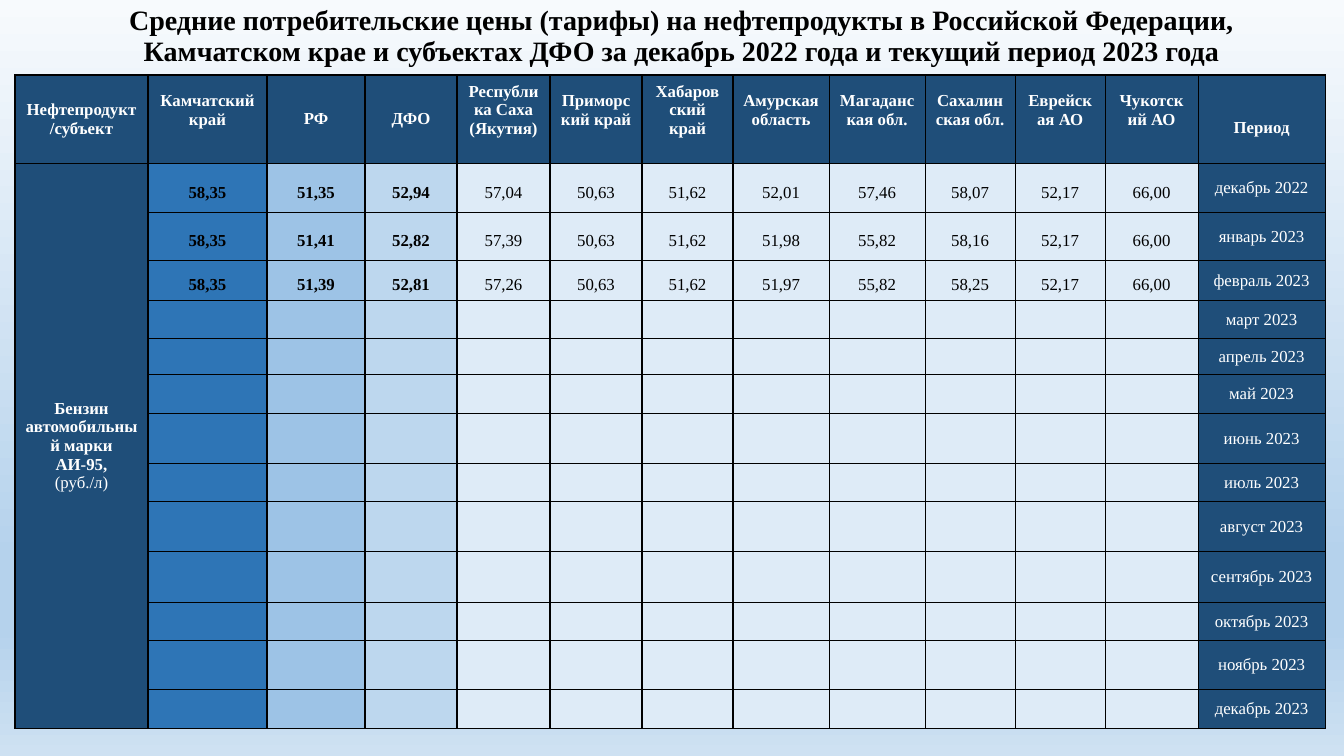
import pptx
import pptx.dml.color
import pptx.enum.text
import pptx.oxml
import pptx.oxml.ns
import pptx.util

COLORS = {
    "navy": "1F4E79", "kamchatka": "2E75B6", "russia": "9DC3E6",
    "district": "BDD7EE", "region": "DEEBF7", "black": "000000", "white": "FFFFFF",
}
BACKGROUND_STOPS = [(0, "F7FAFD"), (74, "B5D2EC"), (83, "B5D2EC"), (100, "CEE1F2")]
TITLE = ("Средние потребительские цены (тарифы) на нефтепродукты в Российской Федерации, "
         "Камчатском крае и субъектах ДФО за декабрь 2022 года и текущий период 2023 года")
HEADERS = [
    "Нефтепродукт/субъект", "Камчатский край", "РФ", "ДФО", "Республика Саха (Якутия)",
    "Приморский край", "Хабаровский край", "Амурская область", "Магаданская обл.",
    "Сахалинская обл.", "Еврейская АО", "Чукотский АО", "Период",
]
MONTHS = ["январь", "февраль", "март", "апрель", "май", "июнь", "июль", "август",
          "сентябрь", "октябрь", "ноябрь", "декабрь"]
PERIODS = ["декабрь 2022"] + [f"{month} 2023" for month in MONTHS]
PRICES = [
    "58,35 51,35 52,94 57,04 50,63 51,62 52,01 57,46 58,07 52,17 66,00".split(),
    "58,35 51,41 52,82 57,39 50,63 51,62 51,98 55,82 58,16 52,17 66,00".split(),
    "58,35 51,39 52,81 57,26 50,63 51,62 51,97 55,82 58,25 52,17 66,00".split(),
]
PRODUCT = [("Бензин автомобильный марки", True), (" АИ-95, ", True), ("(руб./л)", False)]
COLUMN_WIDTHS = [133, 119, 98, 92, 93, 92, 91, 96, 96, 90, 90, 93, 127]
ROW_HEIGHTS = [85, 49, 48, 38, 38, 36, 39, 50, 38, 50, 51, 38, 49, 39]
PRICE_FILLS = ["kamchatka", "russia", "district"] + ["region"] * 8
CENTERED_HEADERS = ("Нефтепродукт/субъект", "РФ", "ДФО")


class PriceSlide:
    """Hold the slide style and draw its background, title and table cells."""

    font_name = "Times New Roman"
    emu_per_px = 914400 / 100.8

    def __init__(self, presentation):
        self.slide = presentation.slides.add_slide(presentation.slide_layouts[6])

    def px(self, length):
        return pptx.util.Emu(round(length * self.emu_per_px))

    def background(self, stops):
        fill = self.slide.background.fill
        fill.gradient()
        fill.gradient_angle = 270
        stop_list = self.slide.element.xpath(".//a:gsLst")[0]
        stop_list.clear()
        for position, color in stops:
            stop_list.append(pptx.oxml.parse_xml(
                f'<a:gs {pptx.oxml.ns.nsdecls("a")} pos="{position * 1000}">'
                f'<a:srgbClr val="{color}"/></a:gs>'))

    def add_lines(self, frame, lines, color, size=12, spacing=None):
        for index, (text, bold) in enumerate(lines):
            paragraph = frame.add_paragraph() if index else frame.paragraphs[0]
            paragraph.alignment = pptx.enum.text.PP_ALIGN.CENTER
            paragraph.line_spacing = spacing
            run = paragraph.add_run()
            run.text = text
            run.font.color.rgb = pptx.dml.color.RGBColor.from_string(COLORS[color])
            formats = {"name": self.font_name, "size": pptx.util.Pt(size), "bold": bold}
            for name, value in formats.items():
                setattr(run.font, name, value)

    def title(self, text, *box):
        shape = self.slide.shapes.add_textbox(*map(self.px, box))
        formats = {"word_wrap": True, "vertical_anchor": pptx.enum.text.MSO_ANCHOR.MIDDLE}
        for name, value in formats.items():
            setattr(shape.text_frame, name, value)
        self.add_lines(shape.text_frame, [(text, True)], "black", 20, 0.9)

    def table(self, left, top, widths, heights):
        box = map(self.px, (left, top, sum(widths), sum(heights)))
        table = self.slide.shapes.add_table(len(heights), len(widths), *box).table
        for column, width in zip(table.columns, widths):
            column.width = self.px(width)
        for row, height in zip(table.rows, heights):
            row.height = self.px(height)
        return table

    def cell(self, cell, fill, lines=(), color="white", spacing=None, top=5, bottom=5):
        formats = {
            "margin_top": self.px(top if lines else 0),
            "margin_bottom": self.px(bottom if lines else 0),
            "vertical_anchor": pptx.enum.text.MSO_ANCHOR.MIDDLE,
        }
        for name, value in formats.items():
            setattr(cell, name, value)
        self.add_lines(cell.text_frame, lines, color, spacing=spacing)
        properties = cell._tc.get_or_add_tcPr()
        for side in ("lnL", "lnR", "lnT", "lnB"):
            properties.append(pptx.oxml.parse_xml(
                f'<a:{side} {pptx.oxml.ns.nsdecls("a")} w="12700"><a:solidFill>'
                f'<a:srgbClr val="{COLORS["black"]}"/></a:solidFill></a:{side}>'))
        cell.fill.solid()
        cell.fill.fore_color.rgb = pptx.dml.color.RGBColor.from_string(COLORS[fill])


def main():
    presentation = pptx.Presentation()
    presentation.slide_width = pptx.util.Inches(13.33)
    presentation.slide_height = pptx.util.Inches(7.5)
    page = PriceSlide(presentation)
    page.background(BACKGROUND_STOPS)
    page.title(TITLE, 96, -2, 1171, 78)
    table = page.table(15, 75, COLUMN_WIDTHS, ROW_HEIGHTS)

    for column, header in enumerate(HEADERS):
        margins = {"bottom": 23}
        if header in CENTERED_HEADERS:
            margins = {}
        elif header == "Период":
            margins = {"top": 23}
        page.cell(table.cell(0, column), "navy", [(header, True)], **margins)

    last_column = len(HEADERS) - 1
    for row, period in enumerate(PERIODS, start=1):
        page.cell(table.cell(row, 0), "navy", PRODUCT if row == 1 else ())
        prices = PRICES[row - 1] if row <= len(PRICES) else None
        for column, fill in enumerate(PRICE_FILLS, start=1):
            lines = [(prices[column - 1], column <= 3)] if prices else ()
            page.cell(table.cell(row, column), fill, lines, "black", 1.5)
        page.cell(table.cell(row, last_column), "navy", [(period, False)])
    table.cell(1, 0).merge(table.cell(len(PERIODS), 0))

    presentation.save("out.pptx")


if __name__ == "__main__":
    main()
